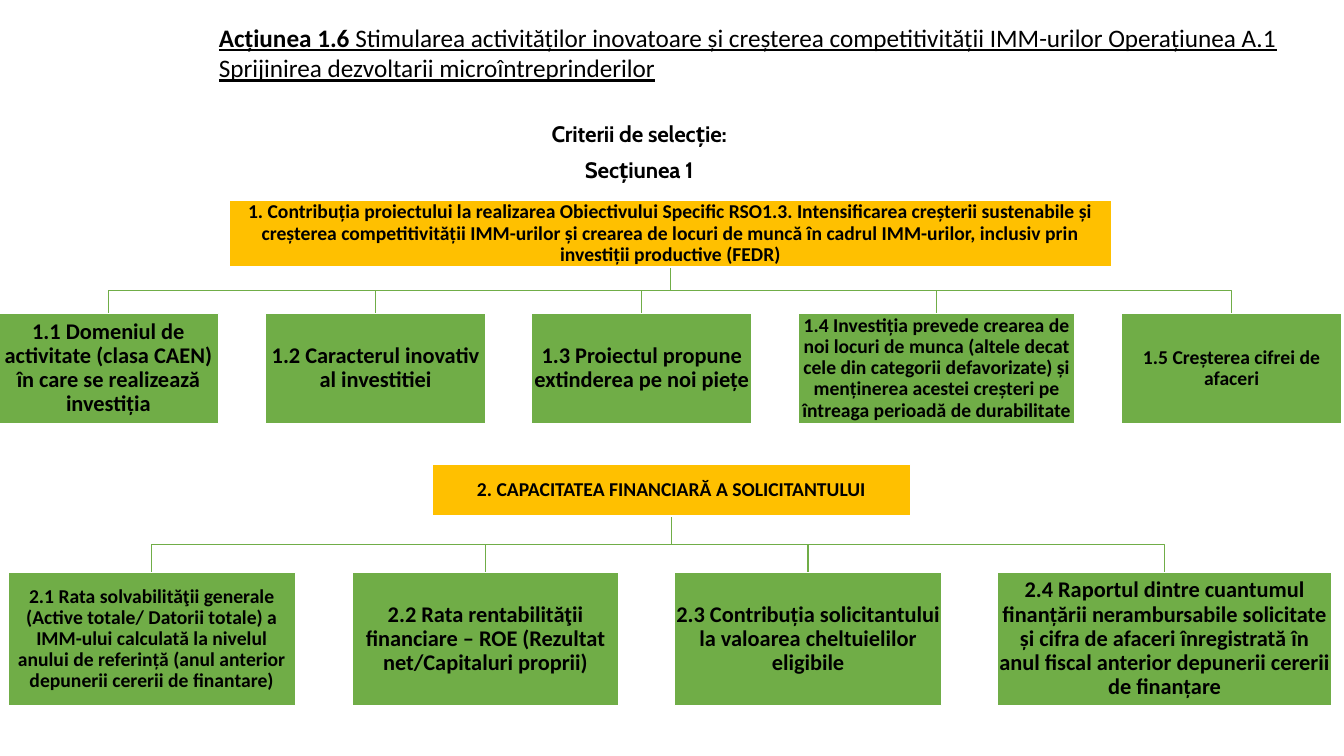
"""Build the slide with the selection criteria of action 1.6."""
from dataclasses import dataclass

from pptx import Presentation
from pptx import util as u
from pptx.dml.color import RGBColor
from pptx.enum import shapes, text

COLORS = {"head": "FFC000", "item": "70AD47", "border": "FFFFFF", "text": "000000"}
BOLD = {"name": "Calibri", "bold": True}
CENTER = {"alignment": text.PP_ALIGN.CENTER}
INSET = u.Inches(0.01)
BOX_FRAME = {
    "word_wrap": True, "vertical_anchor": text.MSO_ANCHOR.MIDDLE,
    "margin_left": INSET, "margin_right": INSET,
    "margin_top": INSET, "margin_bottom": INSET,
}
TITLE_FRAME = {
    "word_wrap": True, "vertical_anchor": text.MSO_ANCHOR.TOP,
    "auto_size": text.MSO_AUTO_SIZE.SHAPE_TO_FIT_TEXT,
}
INTRO_FRAME = {**TITLE_FRAME, "margin_left": 0, "margin_right": 0,
               "margin_top": u.Inches(0.05), "margin_bottom": 0}


@dataclass
class Box:
    """A criterion box: text, left edge, width and text size."""
    label: str
    left: float
    width: float
    size: int

    @property
    def center(self) -> float:
        """Return the horizontal middle of the box."""
        return self.left + self.width / 2


@dataclass
class Tree:
    """A head box above a row of criteria."""
    head: Box
    head_top: float
    head_height: float
    items: list[Box]
    items_top: float
    items_height: float


TREES = [
    Tree(
        Box("1. Contribuția proiectului la realizarea Obiectivului Specific RSO1.3. "
            "Intensificarea creșterii sustenabile și creșterea competitivității "
            "IMM-urilor și crearea de locuri de muncă în cadrul IMM-urilor, inclusiv "
            "prin investiții productive (FEDR)", 2.27, 8.76, 14),
        1.99, 0.66,
        [
            Box("1.1 Domeniul de activitate (clasa CAEN) în care se realizează "
                "investiția", -0.02, 2.19, 16),
            Box("1.2 Caracterul inovativ al investitiei", 2.63, 2.19, 16),
            Box("1.3 Proiectul propune extinderea pe noi piețe", 5.27, 2.19, 16),
            Box("1.4 Investiția prevede crearea de noi locuri de munca (altele decat "
                "cele din categorii defavorizate) și menținerea acestei creșteri pe "
                "întreaga perioadă de durabilitate", 7.92, 2.74, 14),
            Box("1.5 Creșterea cifrei de afaceri", 11.12, 2.19, 14),
        ],
        3.11, 1.09),
    Tree(
        Box("2. CAPACITATEA FINANCIARĂ A SOLICITANTULUI", 4.29, 4.74, 14),
        4.61, 0.51,
        [
            Box("2.1 Rata solvabilităţii generale (Active totale/ Datorii totale) a "
                "IMM-ului calculată la nivelul anului de referință (anul anterior "
                "depunerii cererii de finantare)", 0.08, 2.85, 14),
            Box("2.2 Rata rentabilităţii financiare – ROE (Rezultat net/Capitaluri "
                "proprii)", 3.49, 2.65, 16),
            Box("2.3 Contribuția solicitantului la valoarea cheltuielilor eligibile",
                6.69, 2.65, 16),
            Box("2.4 Raportul dintre cuantumul finanțării nerambursabile solicitate și "
                "cifra de afaceri înregistrată în anul fiscal anterior depunerii "
                "cererii de finanțare", 9.89, 3.32, 16),
        ],
        5.68, 1.32),
]


def apply(target, values: dict) -> None:
    """Set each named attribute on the target."""
    for name, value in values.items():
        setattr(target, name, value)


def color(key: str) -> RGBColor:
    """Return a palette colour."""
    return RGBColor.from_string(COLORS[key])


def add_run(p, label: str, **font):
    """Append a formatted run to a paragraph."""
    r = p.add_run()
    r.text = label
    apply(r.font, font)
    r.font.color.rgb = color("text")
    return r


def set_line(sp, key: str) -> None:
    """Give a shape a one-point outline without shadow."""
    sp.shadow.inherit = False
    sp.line.color.rgb = color(key)
    sp.line.width = u.Pt(1)


def add_box(s, box: Box, top: float, height: float, key: str) -> None:
    """Draw one filled box with its centred text."""
    sp = s.shapes.add_shape(
        shapes.MSO_SHAPE.RECTANGLE,
        *map(u.Inches, (box.left, top, box.width, height)))
    sp.fill.solid()
    sp.fill.fore_color.rgb = color(key)
    set_line(sp, "border")
    tf = sp.text_frame
    apply(tf, BOX_FRAME)
    p = tf.paragraphs[0]
    apply(p, {**CENTER, "line_spacing": 0.9})
    add_run(p, box.label, size=u.Pt(box.size), **BOLD)


def add_branch(s, x1: float, y1: float, x2: float, y2: float) -> None:
    """Draw a stepped line from a head box down to an item."""
    middle = (y1 + y2) / 2
    builder = s.shapes.build_freeform(u.Inches(x1), u.Inches(y1))
    steps = [(x1, middle), (x2, middle), (x2, y2)]
    builder.add_line_segments(
        [(u.Inches(x), u.Inches(y)) for x, y in steps], close=False)
    sp = builder.convert_to_shape()
    sp.fill.background()
    set_line(sp, "item")


def add_tree(s, tree: Tree) -> None:
    """Draw the branches, the head box and the item boxes."""
    for item in tree.items:
        add_branch(s, tree.head.center, tree.head_top + tree.head_height,
                   item.center, tree.items_top)
    add_box(s, tree.head, tree.head_top, tree.head_height, "head")
    for item in tree.items:
        add_box(s, item, tree.items_top, tree.items_height, "item")


def add_title(s) -> None:
    """Place and format the slide title."""
    sp = s.shapes.title
    apply(sp, {"left": u.Inches(2.07), "top": u.Inches(0.17),
               "width": u.Inches(11.18), "height": u.Inches(0.71)})
    apply(sp.text_frame, TITLE_FRAME)
    p = sp.text_frame.paragraphs[0]
    p.alignment = text.PP_ALIGN.LEFT
    font = {**BOLD, "size": u.Pt(18), "underline": True}
    add_run(p, "Acțiunea 1.6", **font)
    add_run(p, " Stimularea activităților inovatoare și creșterea competitivității "
               "IMM-urilor Operațiunea A.1 Sprijinirea dezvoltarii "
               "microîntreprinderilor", **{**font, "bold": False})


def add_intro(s) -> None:
    """Write the two centred heading lines."""
    sp = s.shapes.add_textbox(*map(u.Inches, (2.3, 1.07, 8.08, 0.76)))
    tf = sp.text_frame
    apply(tf, INTRO_FRAME)
    for i, label in enumerate(("Criterii de selecție:", "Secțiunea 1")):
        p = tf.add_paragraph() if i else tf.paragraphs[0]
        apply(p, {**CENTER, "line_spacing": 1.28, "space_before": u.Pt(i)})
        r = add_run(p, label, name="Cabin", size=u.Pt(16), bold=True)
        r.font._element.set("spc", "-10")


def main() -> None:
    """Create and save the presentation."""
    prs = Presentation()
    apply(prs, {"slide_width": u.Inches(13.33), "slide_height": u.Inches(7.5)})
    s = prs.slides.add_slide(prs.slide_layouts[5])
    add_title(s)
    add_intro(s)
    for tree in TREES:
        add_tree(s, tree)
    prs.save("out.pptx")


if __name__ == "__main__":
    main()
